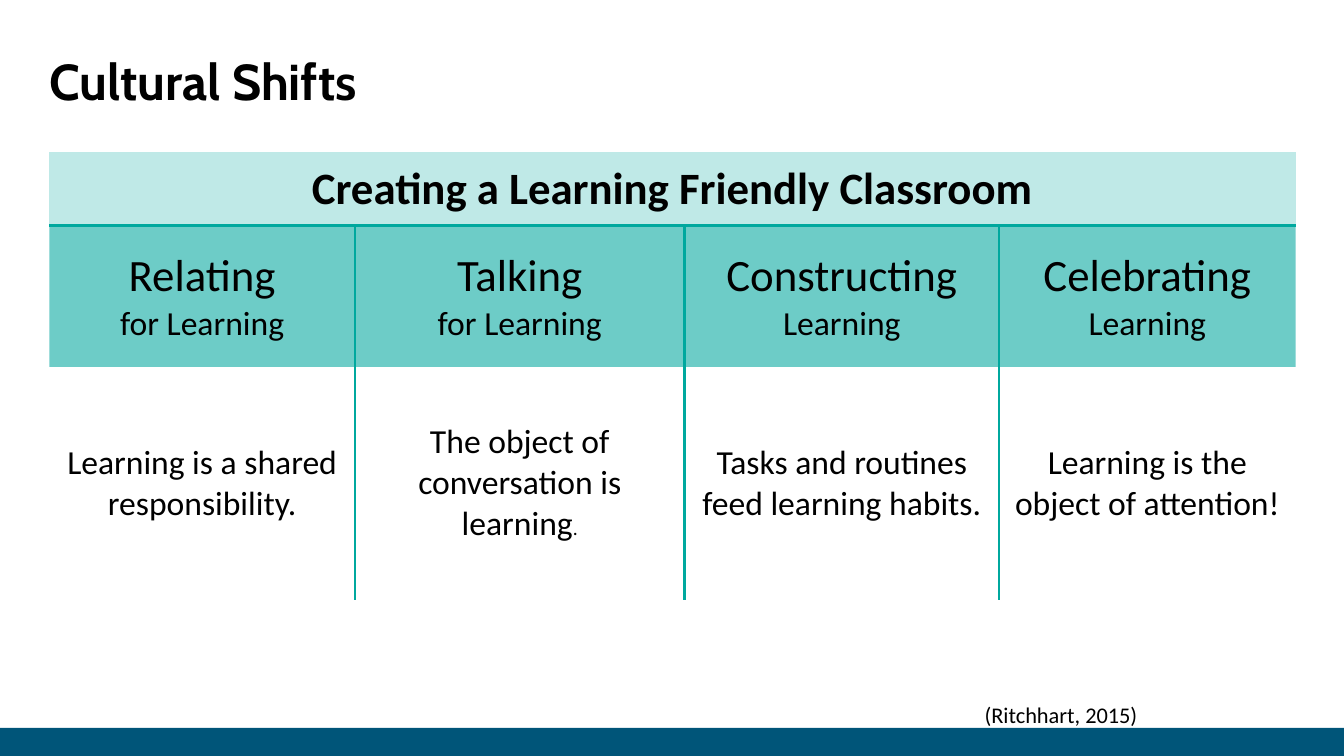
"""Build the Cultural Shifts slide with its table of learning classroom shifts."""
import pptx
import pptx.dml.color
import pptx.enum.shapes
import pptx.enum.text
import pptx.util
from lxml import etree

TITLE = "Cultural Shifts"
SOURCE = "(Ritchhart, 2015)"
BANNER = "Creating a Learning Friendly Classroom"
SHIFTS = [
    ("Relating", "for Learning", [("Learning is a shared responsibility.", 24)]),
    ("Talking", "for Learning",
     [("The object of conversation is learning", 24), (".", 14)]),
    ("Constructing", "Learning", [("Tasks and routines feed learning habits.", 24)]),
    ("Celebrating", "Learning", [("Learning is the object of attention!", 24)]),
]
COLORS = {"bar": "005579", "line": "00A89E", "banner": "BFE9E7",
          "head": "52C3BD", "text": "000000"}
WIDE, HIGH = 13.33, 7.5
LEFT, TOP = 0.49, 1.51
COLS = [3.03, 3.27, 3.12, 2.94]
ROWS = [0.73, 1.4, 2.31]
BAR = 0.28
ALPHA = 84
RULE = 2.25

ALIGN = pptx.enum.text.PP_ALIGN
MIDDLE = pptx.enum.text.MSO_ANCHOR.MIDDLE
NS = "{http://schemas.openxmlformats.org/drawingml/2006/main}"


def rgb(name):
    return pptx.dml.color.RGBColor.from_string(COLORS[name])


def box(*sizes):
    return [pptx.util.Inches(size) for size in sizes]


def style(item, values):
    for name, value in values.items():
        setattr(item, name, value)


def write(frame, lines, align, bold=False, face="Calibri"):
    for index, runs in enumerate(lines):
        para = frame.add_paragraph() if index else frame.paragraphs[0]
        para.alignment = align
        for words, size in runs:
            run = para.add_run()
            run.text = words
            style(run.font, {"name": face, "size": pptx.util.Pt(size), "bold": bold})
            run.font.color.rgb = rgb("text")


def border(cell, sides):
    props = cell._tc.get_or_add_tcPr()
    for side in "LRTB":
        line = etree.SubElement(props, f"{NS}ln{side}", w=str(pptx.util.Pt(RULE)))
        if side in sides:
            fill = etree.SubElement(line, f"{NS}solidFill")
            etree.SubElement(fill, f"{NS}srgbClr", val=COLORS["line"])
        else:
            etree.SubElement(line, f"{NS}noFill")


def paint(cell, name, alpha=100):
    if not name:
        cell.fill.background()
        return
    cell.fill.solid()
    cell.fill.fore_color.rgb = rgb(name)
    if alpha < 100:
        tint = cell._tc.tcPr.find(f"{NS}solidFill/{NS}srgbClr")
        etree.SubElement(tint, f"{NS}alpha", val=str(alpha * 1000))


def add_bar(slide):
    bar = slide.shapes.add_shape(pptx.enum.shapes.MSO_SHAPE.RECTANGLE,
                                 *box(0, HIGH - BAR, WIDE, BAR))
    bar.shadow.inherit = False
    bar.fill.solid()
    bar.fill.fore_color.rgb = rgb("bar")
    bar.line.fill.background()


def add_title(slide):
    title = slide.shapes.title
    style(title, dict(zip(("left", "top", "width", "height"),
                          box(LEFT, 0.32, 11.5, 0.95))))
    style(title.text_frame, {"margin_left": 0, "margin_right": 0, "margin_top": 0,
                             "margin_bottom": 0, "vertical_anchor": MIDDLE,
                             "word_wrap": True})
    write(title.text_frame, [[(TITLE, 36)]], ALIGN.LEFT, True, "Cabin")


def add_grid(slide):
    frame = slide.shapes.add_table(len(ROWS), len(COLS),
                                   *box(LEFT, TOP, sum(COLS), sum(ROWS)))
    table = frame.table
    style(table, {"first_row": False, "horz_banding": False})
    for col, width in zip(table.columns, box(*COLS)):
        col.width = width
    for row, height in zip(table.rows, box(*ROWS)):
        row.height = height
    table.cell(0, 0).merge(table.cell(0, len(COLS) - 1))
    write(table.cell(0, 0).text_frame, [[(BANNER, 32)]], ALIGN.CENTER, True)
    for col, (word, tail, runs) in enumerate(SHIFTS):
        inner = ("L" if col else "") + ("R" if col < len(SHIFTS) - 1 else "")
        top, head, body = (table.cell(row, col) for row in range(len(ROWS)))
        for cell, sides, fill, alpha in ((top, "B", "banner", 100),
                                         (head, inner + "T", "head", ALPHA),
                                         (body, inner, None, 100)):
            cell.vertical_anchor = MIDDLE
            border(cell, sides)
            paint(cell, fill, alpha)
        write(head.text_frame, [[(word, 32)], [(tail, 24)]], ALIGN.CENTER)
        write(body.text_frame, [runs], ALIGN.CENTER)


def add_source(slide):
    note = slide.shapes.add_textbox(*box(5.26, 6.91, 6.12, 0.37))
    note.text_frame.word_wrap = True
    write(note.text_frame, [[(SOURCE, 16)]], ALIGN.RIGHT)


def main():
    deck = pptx.Presentation()
    deck.slide_width, deck.slide_height = box(WIDE, HIGH)
    slide = deck.slides.add_slide(deck.slide_layouts[5])
    for add in (add_bar, add_title, add_grid, add_source):
        add(slide)
    deck.save("out.pptx")


if __name__ == "__main__":
    main()
